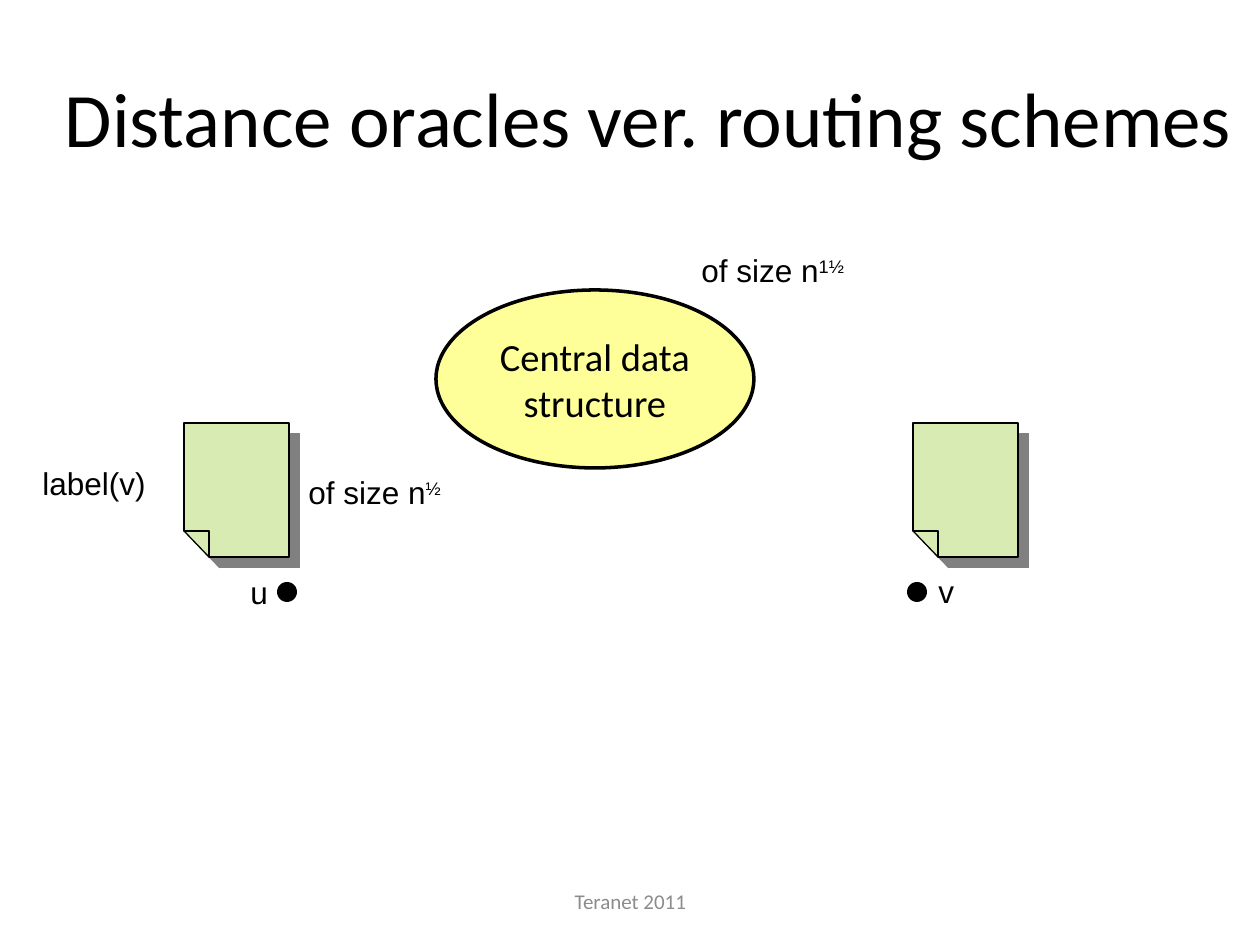
from lxml.etree import SubElement
from pptx import Presentation
from pptx.dml.color import RGBColor
from pptx.enum.shapes import MSO_SHAPE
from pptx.enum.text import MSO_ANCHOR, PP_ALIGN
from pptx.oxml.ns import qn
from pptx.util import Pt

PX = 914400 / 126  # EMU in one px
BLACK, GREY, YELLOW, GREEN = "000000", "8C8C8C", "FFFF99", "D8EBB3"
SHADOW = "808080"

# Content: text, superscript, box in px
TITLE = ("Distance oracles ver. routing schemes ", (20, 38, 1275, 157))
FOOTER = ("Teranet 2011", (431, 876, 399, 50))
CENTRE = ("Central data\vstructure", (436, 290, 318, 178))
LABELS = [
    ("u", "", (238, 567, 43, 50)),
    ("v", "", (926, 566, 42, 50)),
    ("label(v)", "", (30, 458, 130, 50)),
    ("of size n", "1½", (689, 245, 173, 50)),
    ("of size n", "½", (296, 467, 161, 50)),
]
NODES = [(277, 582), (907, 582)]
DOT = 20
NOTES = [(184, 423), (913, 423)]
NOTE_W, NOTE_H, FOLD_W, FOLD_H = 105, 134, 25, 26


def emu(*lengths):
    return [round(n * PX) for n in lengths]


def color(value):
    return RGBColor.from_string(value)


def paint(sp, fill, line=None, width=0):
    sp.shadow.inherit = False
    sp.fill.solid()
    sp.fill.fore_color.rgb = color(fill)
    if line:
        sp.line.color.rgb = color(line)
        sp.line.width = Pt(width)
    else:
        sp.line.fill.background()


def write(sp, text, size, font, rgb=BLACK, centred=False, wrap=False, sup=""):
    tf = sp.text_frame
    tf.word_wrap = wrap
    tf.vertical_anchor = MSO_ANCHOR.MIDDLE if centred else MSO_ANCHOR.TOP
    tf.text = text
    p = tf.paragraphs[0]
    p.alignment = PP_ALIGN.CENTER if centred else PP_ALIGN.LEFT
    if sup:
        r = p.add_run()
        r.text = sup
        r.font._element.set("baseline", "30000")
    for r in p.runs:
        r.font.size = Pt(size)
        r.font.name = font
        r.font.color.rgb = color(rgb)


def add_oval(s, box):
    return s.shapes.add_shape(MSO_SHAPE.OVAL, *emu(*box))


def add_note(s, x, y):
    """Sheet with its lower left corner folded up and a hard shadow."""
    fold_x, fold_y = x + FOLD_W, y + NOTE_H - FOLD_H
    right, bottom = x + NOTE_W, y + NOTE_H
    builder = s.shapes.build_freeform(x, y, scale=PX)
    builder.add_line_segments([(right, y), (right, bottom), (fold_x, bottom),
                               (fold_x, fold_y), (x, fold_y)])
    builder.move_to(x, fold_y)
    builder.add_line_segments([(fold_x, fold_y), (fold_x, bottom)])
    sp = builder.convert_to_shape()
    paint(sp, GREEN, BLACK, 0.75)
    effects = sp._element.spPr.find(qn("a:effectLst"))
    shadow = SubElement(effects, qn("a:outerShdw"), dist=str(Pt(8.5)),
                        dir="2700000", algn="ctr", rotWithShape="0")
    SubElement(shadow, qn("a:srgbClr"), val=SHADOW)


prs = Presentation()
prs.slide_width, prs.slide_height = emu(1260, 945)
s = prs.slides.add_slide(prs.slide_layouts[6])

# Title and footer
for (text, box), size, rgb in ((TITLE, 44, BLACK), (FOOTER, 12, GREY)):
    sp = s.shapes.add_textbox(*emu(*box))
    write(sp, text, size, "Calibri", rgb, centred=True, wrap=True)

# Nodes u and v
for x, y in NODES:
    paint(add_oval(s, (x, y, DOT, DOT)), BLACK)

# Central data structure
sp = add_oval(s, CENTRE[1])
paint(sp, YELLOW, BLACK, 2)
write(sp, CENTRE[0], 22, "Calibri", centred=True)

# Label sheets held by the nodes
for x, y in NOTES:
    add_note(s, x, y)

# Labels
for text, sup, box in LABELS:
    write(s.shapes.add_textbox(*emu(*box)), text, 18, "Arial", sup=sup)

prs.save("out.pptx")
